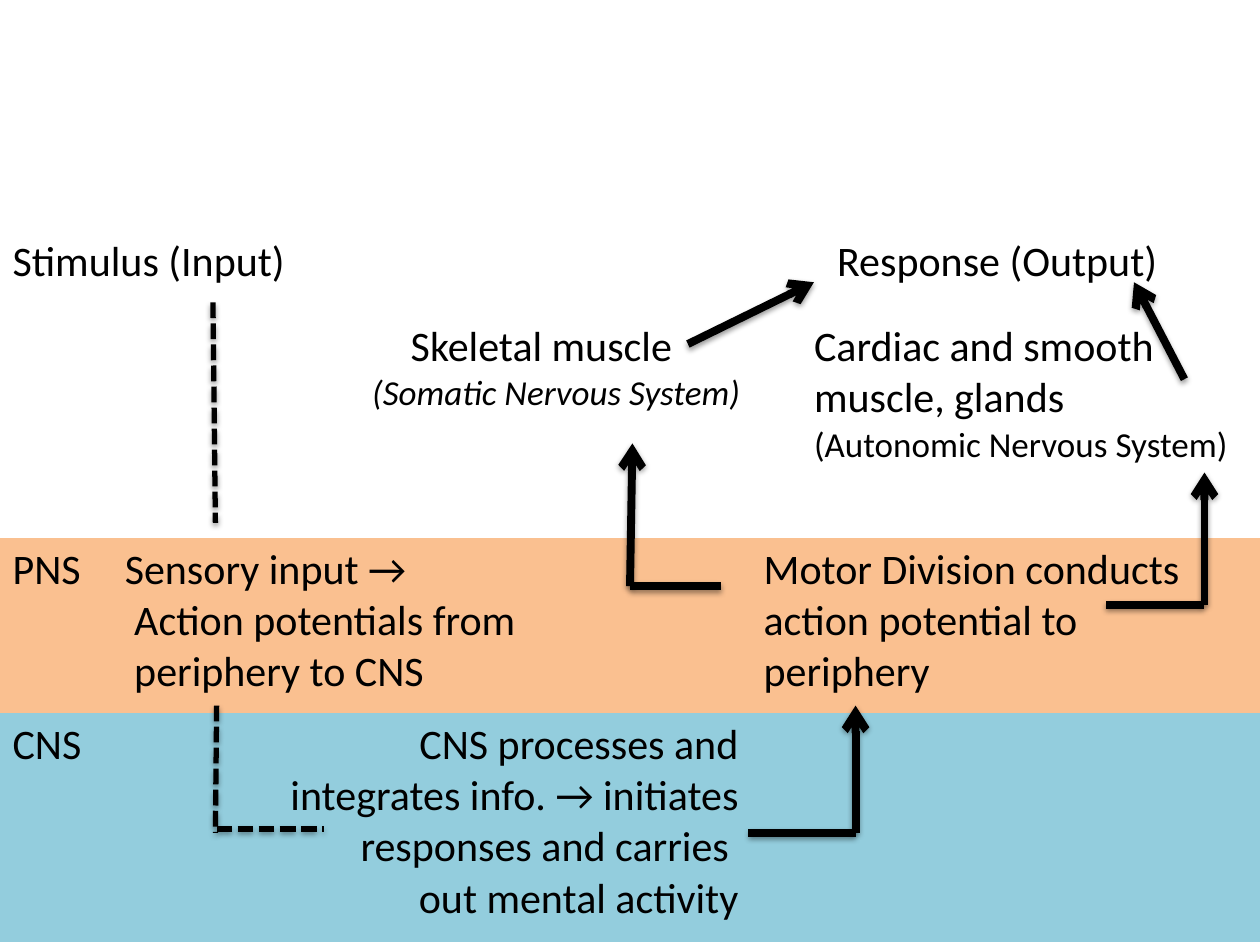
from lxml import etree
from pptx import Presentation
from pptx.dml.color import RGBColor
from pptx.enum.dml import MSO_LINE
from pptx.enum.shapes import MSO_CONNECTOR
from pptx.enum.text import PP_ALIGN
from pptx.oxml.ns import qn
from pptx.util import Pt

STRAIGHT = MSO_CONNECTOR.STRAIGHT
DASHED = MSO_LINE.SQUARE_DOT
LEFT, CENTER, RIGHT = PP_ALIGN.LEFT, PP_ALIGN.CENTER, PP_ALIGN.RIGHT
NO_GRID_STYLE = "{2D5ABB26-0587-4C30-8999-92F81FD0307C}"
FONT = "Calibri"
BLACK, PNS_ORANGE, CNS_BLUE = "000000", "FAC090", "93CDDD"

COLUMN_WIDTHS = [64.1, 355.7, 9.4, 28.8, 262]
ROW_HEIGHTS = [48.2, 127.4, 100.1, 131]
TABLE_TOP = 131.8

CELLS = [
    (0, 0, 1, None, LEFT, [("Stimulus (Input)", {})]),
    (0, 2, 4, None, CENTER, [("Response (Output)", {})]),
    (1, 0, 3, None, LEFT, [
        ("Skeletal muscle", {"indent": 227.5}),
        ("(Somatic Nervous System)", {"size": 20, "italic": True, "indent": 205.5}),
    ]),
    (1, 4, 4, None, LEFT, [
        ("Cardiac and smooth", {}),
        ("muscle, glands", {}),
        ("(Autonomic Nervous System)", {"size": 20}),
    ]),
    (2, 0, 0, PNS_ORANGE, LEFT, [("PNS", {})]),
    (2, 1, 2, PNS_ORANGE, LEFT, [
        ("Sensory input →", {}),
        ("Action potentials from", {"indent": 5.4}),
        ("periphery to CNS", {"indent": 5.4}),
    ]),
    (2, 3, 4, PNS_ORANGE, LEFT, [
        ("Motor Division conducts action potential to periphery", {}),
    ]),
    (3, 0, 0, CNS_BLUE, LEFT, [("CNS", {})]),
    (3, 1, 2, CNS_BLUE, RIGHT, [
        ("CNS processes and", {}),
        (" integrates info. → initiates responses and carries ", {}),
        ("out mental activity", {}),
    ]),
    (3, 3, 4, CNS_BLUE, LEFT, []),
]

SENSORY_PATH = [
    ((121.7, 172.8), (123.1, 298.8)),
    ((123.8, 403.2), (123.1, 475.9)),
    ((123.8, 473.8), (185, 473.8)),
]
MOTOR_ELBOWS = [
    ((427.7, 475.9), (488.9, 475.9), (488.9, 403.2)),
    ((411.8, 335), (360, 335), (361.4, 253.4)),
    ((632.2, 345.6), (688.3, 345.6), (688.3, 270)),
]
RESPONSE_ARROWS = [
    ((676.8, 216.7), (648, 161.3)),
    ((393.1, 196.6), (465.1, 161.3)),
]


def colour(hex_code):
    return RGBColor.from_string(hex_code)


def add_shadow(connector):
    effects = etree.SubElement(connector._element.spPr, qn("a:effectLst"))
    shadow = etree.SubElement(
        effects, qn("a:outerShdw"), blurRad=str(Pt(3.1)), dist=str(Pt(1.6)),
        dir="5400000", rotWithShape="0")
    tint = etree.SubElement(shadow, qn("a:srgbClr"), val=BLACK)
    etree.SubElement(tint, qn("a:alpha"), val="38000")


def add_line(shapes, start, end, width=4.5, dash=None, arrow=False):
    connector = shapes.add_connector(STRAIGHT, *map(Pt, start + end))
    connector.line.color.rgb = colour(BLACK)
    connector.line.width = Pt(width)
    if dash:
        connector.line.dash_style = dash
    if arrow:
        outline = connector._element.spPr.find(qn("a:ln"))
        etree.SubElement(outline, qn("a:tailEnd"), type="arrow")
    add_shadow(connector)


def add_elbow_arrow(shapes, start, corner, end):
    elbow = shapes.add_group_shape().shapes
    add_line(elbow, start, corner)
    add_line(elbow, corner, end, arrow=True)


def write_paragraph(paragraph, text, alignment, size=24, italic=False, indent=0):
    paragraph.alignment = alignment
    if indent:
        paragraph._p.get_or_add_pPr().set("marL", str(Pt(indent)))
    run = paragraph.add_run()
    run.text = text
    run.font.name = FONT
    run.font.size = Pt(size)
    run.font.italic = italic
    run.font.color.rgb = colour(BLACK)


def fill_cell(table, row, first, last, fill, alignment, lines):
    cell = table.cell(row, first)
    if last > first:
        cell.merge(table.cell(row, last))
    if fill:
        cell.fill.solid()
        cell.fill.fore_color.rgb = colour(fill)
    else:
        cell.fill.background()
    frame = cell.text_frame
    for index, (text, style) in enumerate(lines):
        paragraph = frame.add_paragraph() if index else frame.paragraphs[0]
        write_paragraph(paragraph, text, alignment, **style)


def add_pathway_table(shapes):
    table = shapes.add_table(
        len(ROW_HEIGHTS), len(COLUMN_WIDTHS), Pt(0), Pt(TABLE_TOP),
        Pt(sum(COLUMN_WIDTHS)), Pt(sum(ROW_HEIGHTS))).table
    table.first_row = False
    table.horz_banding = False
    table._tbl.tblPr.find(qn("a:tableStyleId")).text = NO_GRID_STYLE
    for column, width in zip(table.columns, COLUMN_WIDTHS):
        column.width = Pt(width)
    for row, height in zip(table.rows, ROW_HEIGHTS):
        row.height = Pt(height)
    for cell in CELLS:
        fill_cell(table, *cell)


def main():
    deck = Presentation()
    deck.slide_width, deck.slide_height = Pt(720), Pt(540)
    shapes = deck.slides.add_slide(deck.slide_layouts[6]).shapes
    add_pathway_table(shapes)
    for start, end in SENSORY_PATH:
        add_line(shapes, start, end, width=3, dash=DASHED)
    for points in MOTOR_ELBOWS:
        add_elbow_arrow(shapes, *points)
    for start, end in RESPONSE_ARROWS:
        add_line(shapes, start, end, arrow=True)
    deck.save("out.pptx")


if __name__ == "__main__":
    main()
